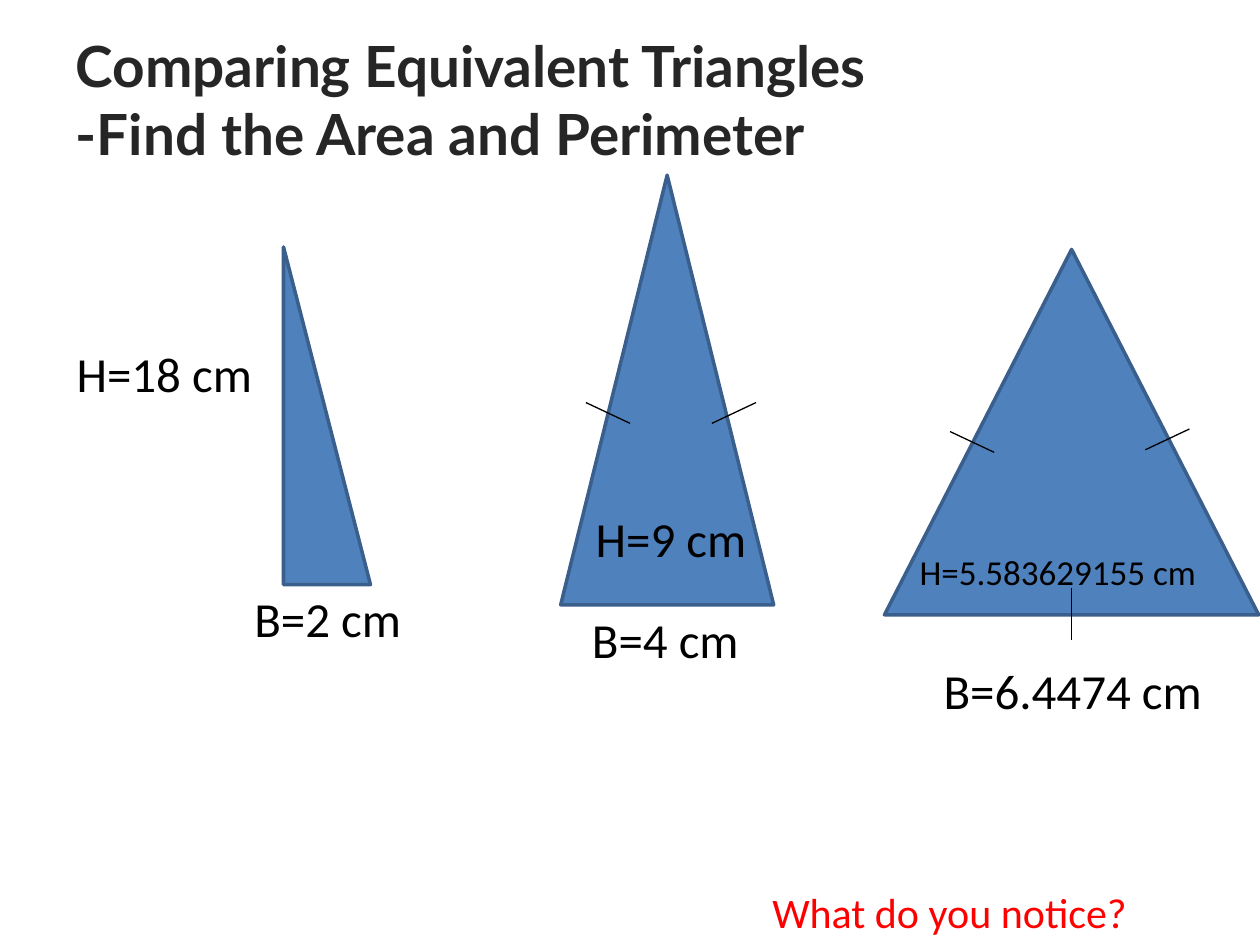
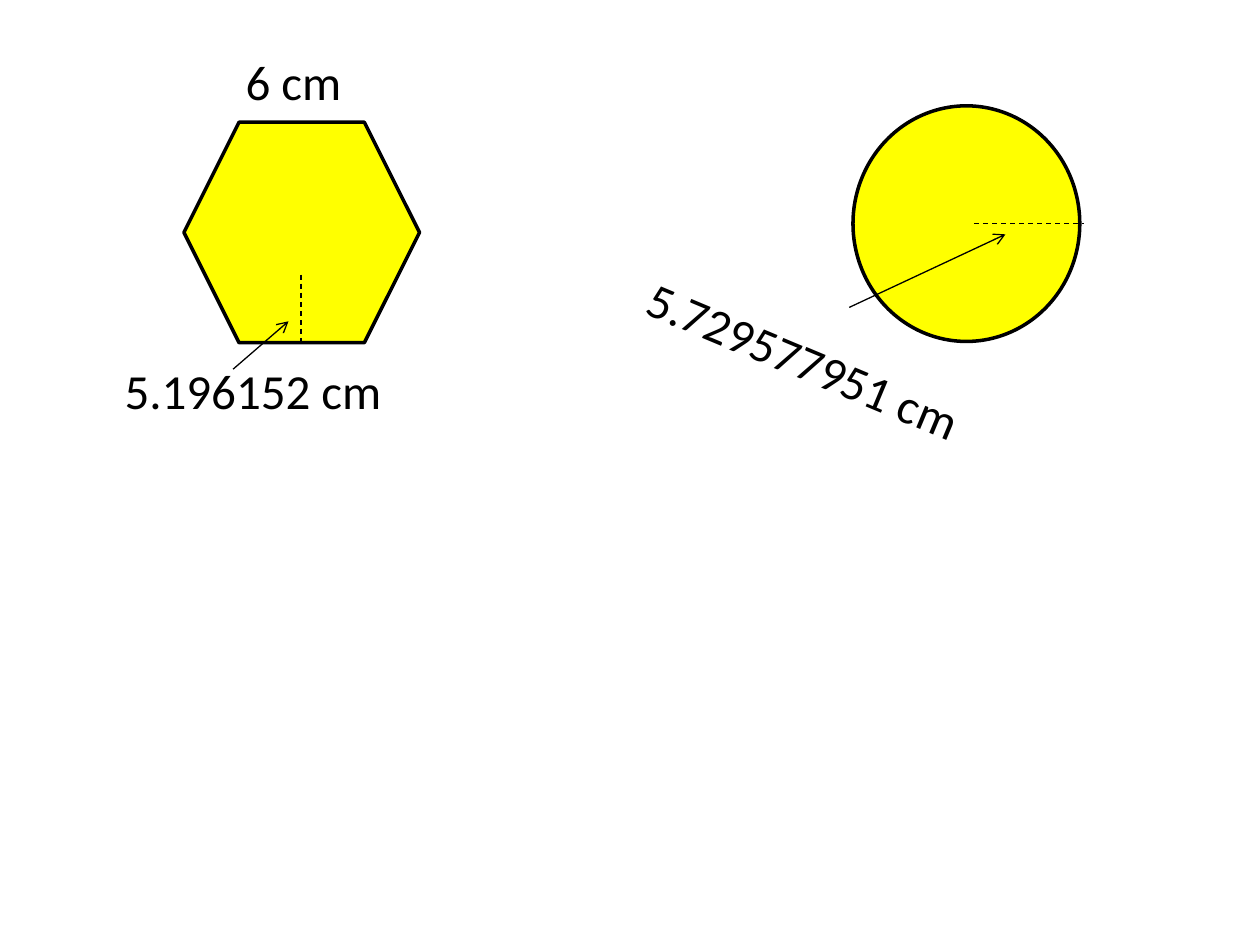
import collections

import lxml.etree
import pptx
import pptx.dml.color
import pptx.enum.dml
import pptx.enum.shapes
import pptx.enum.text
import pptx.oxml.ns
import pptx.util

COLUMNS, ROWS = 20, 15
SLIDE_W, SLIDE_H = pptx.util.Inches(10), pptx.util.Inches(7.5)
BLACK, RED, TITLE_GREY = "000000", "FF0000", "262626"
BLUE, DARK_BLUE, YELLOW = "4F81BD", "3A5F8C", "FFFF00"
SHAPE = pptx.enum.shapes.MSO_SHAPE
ALIGN = pptx.enum.text.PP_ALIGN

Box = collections.namedtuple("Box", "col row cols rows")


def color(value):
    return pptx.dml.color.RGBColor.from_string(value)


def x(cols):
    return round(SLIDE_W * cols / COLUMNS)


def y(rows):
    return round(SLIDE_H * rows / ROWS)


def place(box):
    return x(box.col), y(box.row), x(box.cols), y(box.rows)


def inside(box, part):
    """Move a part given relative to the corner of a box onto the slide grid."""
    return Box(box.col + part.col, box.row + part.row, part.cols, part.rows)


def add_run(p, text, size, font="Calibri", fill=BLACK, bold=False):
    r = p.add_run()
    r.text = text
    r.font.name = font
    r.font.size = pptx.util.Pt(size)
    r.font.color.rgb = color(fill)
    r.font.bold = bold


def add_text(shapes, box, text, size):
    sp = shapes.add_textbox(*place(box))
    sp.text_frame.word_wrap = True
    p = sp.text_frame.paragraphs[0]
    add_run(p, text, size)
    return sp, p


def add_label(shapes, box, text, size=28, rotation=0):
    sp, p = add_text(shapes, box, text, size)
    sp.rotation = rotation
    p.line_spacing = 1.15
    p.space_after = pptx.util.Pt(10)


def add_line(shapes, box, start, end, dashed=False, arrow=False):
    """Draw a thin line between two points given relative to a box."""
    ends = [(x(box.col + col), y(box.row + row)) for col, row in (start, end)]
    cxn = shapes.add_connector(pptx.enum.shapes.MSO_CONNECTOR.STRAIGHT,
                               *ends[0], *ends[1])
    cxn.line.color.rgb = color(BLACK)
    cxn.line.width = pptx.util.Pt(0.75)
    if dashed:
        cxn.line.dash_style = pptx.enum.dml.MSO_LINE.DASH
    if arrow:
        lxml.etree.SubElement(cxn.line._get_or_add_ln(),
                              pptx.oxml.ns.qn("a:tailEnd"), type="arrow")
    lxml.etree.SubElement(cxn._element.spPr, pptx.oxml.ns.qn("a:effectLst"))


def add_figure(slide, box, preset, fill, line):
    """Start a group with its filled outline and return the group's shapes."""
    shapes = slide.shapes.add_group_shape().shapes
    sp = shapes.add_shape(preset, *place(box))
    sp.shadow.inherit = False
    sp.fill.solid()
    sp.fill.fore_color.rgb = color(fill)
    sp.line.color.rgb = color(line)
    sp.line.width = pptx.util.Pt(2)
    return shapes


def add_triangle(slide, box, preset, base, height, ticks=()):
    """Base and height are (text, size, part); ticks are pairs of points."""
    shapes = add_figure(slide, box, preset, BLUE, DARK_BLUE)
    for text, size, part in (base, height):
        add_label(shapes, inside(box, part), text, size)
    for start, end in ticks:
        add_line(shapes, box, start, end)


def side_ticks(left, right, row, right_row):
    """Two mirrored ticks that rise outwards from their inner ends."""
    run, rise = 0.7, 0.33
    return [((left, row), (left - run, row - rise)),
            ((right, right_row), (right + run, right_row - rise))]


def add_hexagon(slide, box):
    shapes = add_figure(slide, box, SHAPE.HEXAGON, YELLOW, BLACK)
    add_label(shapes, inside(box, Box(0.78, -1.36, 4.1, 1.44)), "6 cm")
    add_label(shapes, inside(box, Box(-1.14, 3.54, 4.72, 1.66)), "5.196152 cm")
    add_line(shapes, box, (1.86, 2.42), (1.86, box.rows), dashed=True)
    add_line(shapes, box, (0.78, 3.92), (1.66, 3.16), arrow=True)


def add_circle(slide, box):
    shapes = add_figure(slide, box, SHAPE.OVAL, YELLOW, BLACK)
    add_line(shapes, box, (-0.06, 3.2), (2.42, 2.04), arrow=True)
    add_line(shapes, box, (1.92, box.rows / 2), (3.66, box.rows / 2), dashed=True)
    add_label(shapes, inside(box, Box(-3.66, 3.38, 6, 1.62)),
              "5.729577951 cm", rotation=22.7)


def add_title(slide, box, text):
    title = slide.shapes.title
    title.left, title.top, title.width, title.height = place(box)
    tf = title.text_frame
    tf.vertical_anchor = pptx.enum.text.MSO_ANCHOR.MIDDLE
    p = tf.paragraphs[0]
    p.alignment = ALIGN.LEFT
    for i, line in enumerate(text.split("\n")):
        if i:
            p.add_line_break()
        add_run(p, line, 32.4, "Lato", TITLE_GREY, bold=True)


def add_question(slide, box, text):
    sp, p = add_text(slide.shapes, box, text, 24)
    p.alignment = ALIGN.CENTER
    p.runs[0].font.color.rgb = color(RED)


def build_triangles(prs):
    slide = prs.slides.add_slide(prs.slide_layouts[5])
    add_title(slide, Box(1, 0.32, 18, 2.5),
              "Comparing Equivalent Triangles\n-Find the Area and Perimeter")
    add_question(slide, Box(10.38, 13.98, 9.38, 1), "What do you notice?")
    add_triangle(slide, Box(4.5, 3.92, 1.38, 5.36), SHAPE.RIGHT_TRIANGLE,
                 ("B=2 cm", 28, Box(-0.66, 5.18, 3, 1.28)),
                 ("H=18 cm", 28, Box(-3.48, 1.3, 3.26, 1.92)))
    add_triangle(slide, Box(8.9, 2.78, 3.38, 6.82), SHAPE.ISOSCELES_TRIANGLE,
                 ("B=4 cm", 28, Box(0.3, 6.66, 3.06, 1.48)),
                 ("H=9 cm", 28, Box(0.36, 5.06, 3, 1.46)),
                 side_ticks(1.1, 2.4, 3.94, 3.94))
    add_triangle(slide, Box(14.04, 3.96, 5.94, 5.8), SHAPE.ISOSCELES_TRIANGLE,
                 ("B=6.4474 cm", 28, Box(0.74, 6.28, 4.84, 1.06)),
                 ("H=5.583629155 cm", 20, Box(0.36, 4.58, 5.58, 1.72)),
                 side_ticks(1.74, 4.14, 3.22, 3.18) + [((2.97, 5.38), (2.97, 6.2))])


def build_hexagon_and_circle(prs):
    slide = prs.slides.add_slide(prs.slide_layouts[6])
    add_hexagon(slide, Box(2.92, 1.94, 3.74, 3.5))
    add_circle(slide, Box(13.54, 1.68, 3.6, 3.74))


def main():
    prs = pptx.Presentation()
    prs.slide_width, prs.slide_height = SLIDE_W, SLIDE_H
    build_triangles(prs)
    build_hexagon_and_circle(prs)
    prs.save("out.pptx")


if __name__ == "__main__":
    main()
